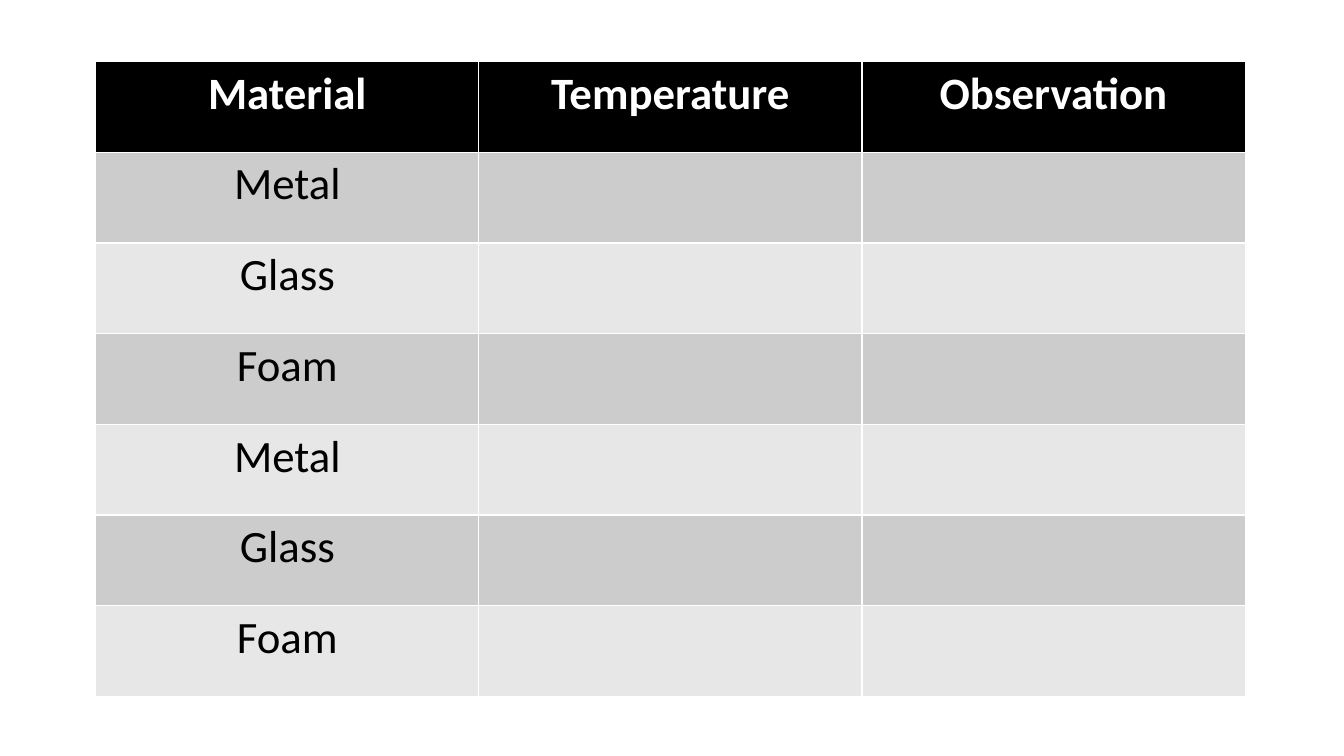
"""Build a slide with an empty observation table for three materials."""
from pptx import Presentation
from pptx import util as u
from pptx.dml.color import RGBColor
from pptx.enum import text

COLORS = {"header": "000000", "odd": "CCCCCC", "even": "E7E7E7",
          "header_text": "FFFFFF", "body_text": "000000"}
HEADINGS = ["Material", "Temperature", "Observation"]
MATERIALS = ["Metal", "Glass", "Foam"] * 2
LEFT, TOP = 0.95, 0.61
COLUMN_WIDTH, ROW_HEIGHT = 3.8, 0.9

deck = Presentation()
deck.slide_width, deck.slide_height = u.Inches(13.33), u.Inches(7.5)
page = deck.slides.add_slide(deck.slide_layouts[6])

rows = [HEADINGS] + [[material, "", ""] for material in MATERIALS]
table = page.shapes.add_table(
    len(rows), len(HEADINGS), u.Inches(LEFT), u.Inches(TOP),
    u.Inches(COLUMN_WIDTH * len(HEADINGS)), u.Inches(ROW_HEIGHT * len(rows))).table

for row_number, row in enumerate(rows):
    is_header = row_number == 0
    band = "header" if is_header else "odd" if row_number % 2 else "even"
    ink = "header_text" if is_header else "body_text"
    for column_number, wording in enumerate(row):
        cell = table.cell(row_number, column_number)
        cell.fill.solid()
        cell.fill.fore_color.rgb = RGBColor.from_string(COLORS[band])
        cell.text = wording
        para = cell.text_frame.paragraphs[0]
        para.alignment = text.PP_ALIGN.CENTER
        para.font.name = "Calibri"
        para.font.size = u.Pt(32)
        para.font.bold = is_header
        para.font.color.rgb = RGBColor.from_string(COLORS[ink])

deck.save("out.pptx")
